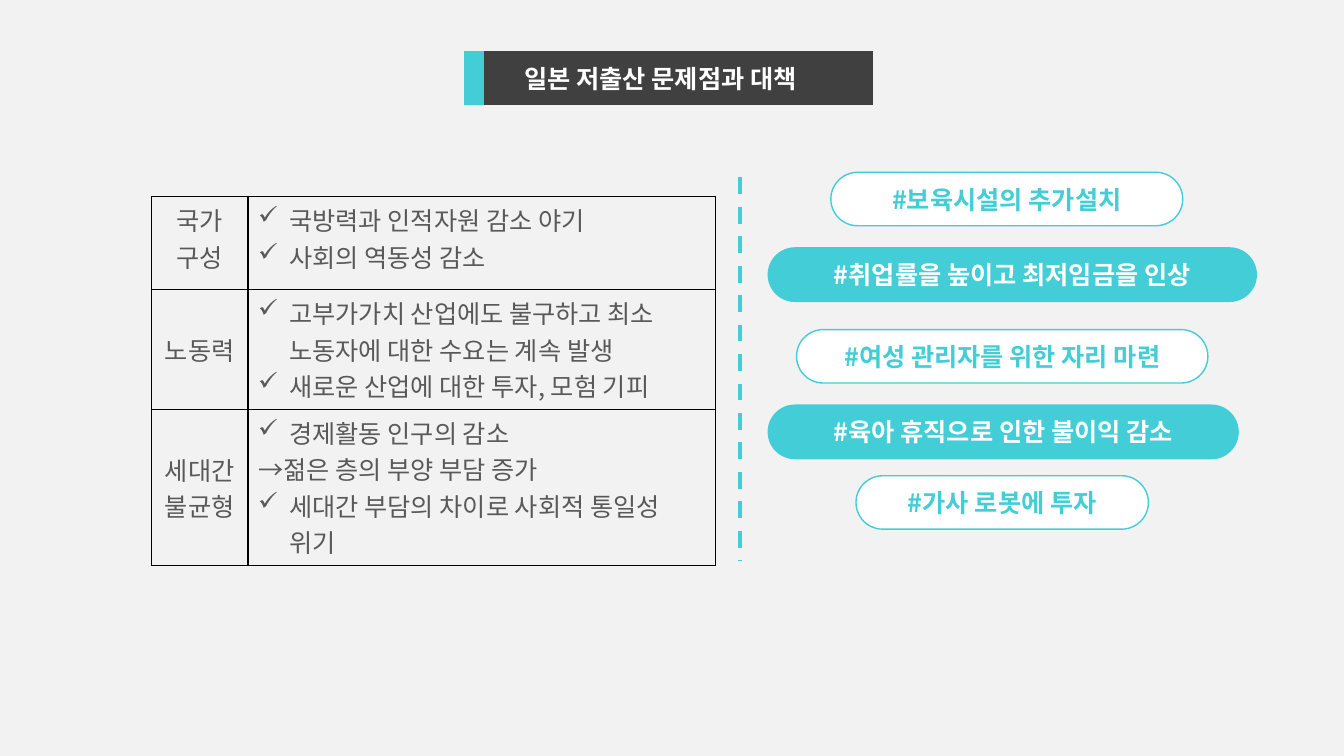
from lxml import etree
from pptx import Presentation
from pptx.dml.color import RGBColor
from pptx.enum.dml import MSO_LINE
from pptx.enum.shapes import MSO_CONNECTOR, MSO_SHAPE
from pptx.enum.text import MSO_ANCHOR, MSO_AUTO_SIZE, PP_ALIGN
from pptx.oxml.ns import qn
from pptx.util import Inches, Pt

FONT = "Noto Sans CJK KR"
TEAL = RGBColor(0x43, 0xCD, 0xD7)
DARK = RGBColor(0x40, 0x40, 0x40)
GRAY = RGBColor(0x59, 0x59, 0x59)
WHITE = RGBColor(0xFF, 0xFF, 0xFF)
BACKGROUND = RGBColor(0xF2, 0xF2, 0xF2)
BORDER = RGBColor(0x00, 0x00, 0x00)
LEFT, CENTER = PP_ALIGN.LEFT, PP_ALIGN.CENTER
TOP, MIDDLE = MSO_ANCHOR.TOP, MSO_ANCHOR.MIDDLE

TITLE = "일본 저출산 문제점과 대책"
CHECK, PLAIN = "✓", None
PROBLEMS = [
    (0.92, TOP, ["국가", "구성"], [
        (CHECK, "국방력과 인적자원 감소 야기"),
        (CHECK, "사회의 역동성 감소"),
    ]),
    (1.19, MIDDLE, ["노동력"], [
        (CHECK, "고부가가치 산업에도 불구하고 최소 노동자에 대한 수요는 계속 발생"),
        (CHECK, "새로운 산업에 대한 투자, 모험 기피"),
    ]),
    (1.55, MIDDLE, ["세대간", "불균형"], [
        (CHECK, "경제활동 인구의 감소"),
        (PLAIN, "→젊은 층의 부양 부담 증가"),
        (CHECK, "세대간 부담의 차이로 사회적 통일성 위기"),
    ]),
]
COLUMN_WIDTHS = (0.96, 4.64)
MEASURES = [
    ("#보육시설의 추가설치", 8.24, 1.71, 3.49),
    ("#취업률을 높이고 최저임금을 인상", 7.62, 2.46, 4.84),
    ("#여성 관리자를 위한 자리 마련", 7.9, 3.27, 4.08),
    ("#육아 휴직으로 인한 불이익 감소", 7.62, 4.02, 4.66),
    ("#가사 로봇에 투자", 8.49, 4.72, 2.9),
]
BAR_HEIGHT = 0.53


def write(paragraph, text, color, bold=False, align=LEFT):
    paragraph.alignment = align
    run = paragraph.add_run()
    run.text = text
    run.font.size = Pt(18)
    run.font.bold = bold
    run.font.color.rgb = color
    run.font.name = FONT
    east_asian = etree.SubElement(run.font._element, qn("a:ea"))
    east_asian.set("typeface", FONT)


def indent(paragraph, left, first=0.0):
    properties = paragraph._p.get_or_add_pPr()
    properties.set("marL", str(Inches(left)))
    properties.set("indent", str(Inches(first)))
    return properties


def add_check(paragraph):
    properties = indent(paragraph, 0.31, -0.31)
    etree.SubElement(properties, qn("a:buChar")).set("char", CHECK)


def paragraphs_for(text_frame, items):
    for index, item in enumerate(items):
        yield (text_frame.add_paragraph() if index else text_frame.paragraphs[0]), item


def style_cell(cell, anchor):
    cell.vertical_anchor = anchor
    properties = cell._tc.get_or_add_tcPr()
    for side in ("lnL", "lnR", "lnT", "lnB"):
        line = etree.SubElement(properties, qn("a:" + side))
        line.set("w", str(Pt(1)))
        fill = etree.SubElement(line, qn("a:solidFill"))
        etree.SubElement(fill, qn("a:srgbClr")).set("val", str(BORDER))
    cell.fill.background()


def add_title(slide):
    title = slide.shapes.title
    title.left, title.top = Inches(4.6), Inches(0.51)
    title.width, title.height = Inches(4.06), Inches(BAR_HEIGHT)
    title.fill.gradient()
    title.fill.gradient_angle = 180
    for stop, color in zip(title.fill.gradient_stops, (DARK, TEAL)):
        stop.position = 0.95
        stop.color.rgb = color
    title.text_frame.auto_size = MSO_AUTO_SIZE.NONE
    title.text_frame.vertical_anchor = MIDDLE
    paragraph = title.text_frame.paragraphs[0]
    paragraph.line_spacing = 1.0
    indent(paragraph, 0.5)
    write(paragraph, TITLE, WHITE, bold=True)


def add_problems(slide):
    height = sum(row[0] for row in PROBLEMS)
    table = slide.shapes.add_table(
        len(PROBLEMS), len(COLUMN_WIDTHS), Inches(1.5), Inches(1.95),
        Inches(sum(COLUMN_WIDTHS)), Inches(height)).table
    table.first_row = table.horz_banding = False
    for column, width in zip(table.columns, COLUMN_WIDTHS):
        column.width = Inches(width)
    for index, (row_height, anchor, labels, details) in enumerate(PROBLEMS):
        table.rows[index].height = Inches(row_height)
        label_cell, detail_cell = table.rows[index].cells
        style_cell(label_cell, anchor)
        style_cell(detail_cell, TOP)
        for paragraph, label in paragraphs_for(label_cell.text_frame, labels):
            write(paragraph, label, GRAY, align=CENTER)
        for paragraph, (bullet, text) in paragraphs_for(detail_cell.text_frame, details):
            if bullet:
                add_check(paragraph)
            write(paragraph, text, GRAY)


def add_divider(slide):
    divider = slide.shapes.add_connector(
        MSO_CONNECTOR.STRAIGHT, Inches(7.34), Inches(1.76), Inches(7.34), Inches(5.57))
    divider.line.color.rgb = TEAL
    divider.line.width = Pt(3)
    divider.line.dash_style = MSO_LINE.DASH
    etree.SubElement(divider._element.spPr, qn("a:effectLst"))


def add_measures(slide):
    for index, (text, left, top, width) in enumerate(MEASURES):
        fill, ink = (TEAL, WHITE) if index % 2 else (WHITE, TEAL)
        pill = slide.shapes.add_shape(
            MSO_SHAPE.ROUNDED_RECTANGLE,
            Inches(left), Inches(top), Inches(width), Inches(BAR_HEIGHT))
        pill.adjustments[0] = 0.5
        pill.shadow.inherit = False
        pill.fill.solid()
        pill.fill.fore_color.rgb = fill
        pill.line.color.rgb = TEAL
        pill.line.width = Pt(1)
        pill.text_frame.vertical_anchor = MIDDLE
        write(pill.text_frame.paragraphs[0], text, ink, bold=True, align=CENTER)


def main():
    presentation = Presentation()
    presentation.slide_width = Inches(13.33)
    presentation.slide_height = Inches(7.5)
    slide = presentation.slides.add_slide(presentation.slide_layouts[5])
    slide.background.fill.solid()
    slide.background.fill.fore_color.rgb = BACKGROUND
    add_title(slide)
    add_measures(slide)
    add_problems(slide)
    add_divider(slide)
    presentation.save("out.pptx")


if __name__ == "__main__":
    main()
